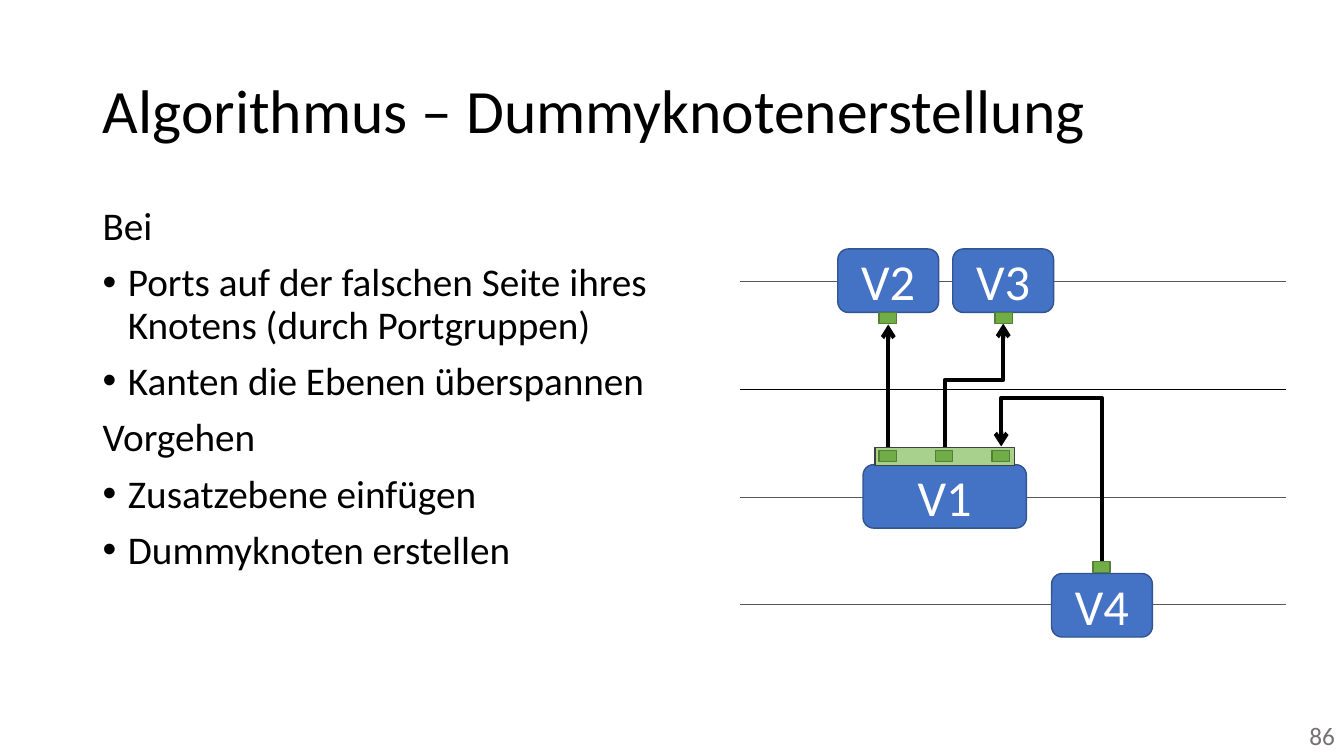
"""Builds the slide on creating dummy nodes in a layered graph drawing."""
import pptx
import pptx.util
import pptx.dml.color
import pptx.enum.shapes
import pptx.enum.text
import pptx.oxml
import pptx.oxml.ns
import lxml.etree

Inches, Pt = pptx.util.Inches, pptx.util.Pt
RGBColor = pptx.dml.color.RGBColor
SHAPE = pptx.enum.shapes.MSO_SHAPE
CONNECTOR = pptx.enum.shapes.MSO_CONNECTOR
ALIGN = pptx.enum.text.PP_ALIGN
ANCHOR = pptx.enum.text.MSO_ANCHOR
qn = pptx.oxml.ns.qn

BLACK = RGBColor(0x00, 0x00, 0x00)
WHITE = RGBColor(0xFF, 0xFF, 0xFF)
LAYER_GRAY = RGBColor(0x59, 0x59, 0x59)
NUMBER_GRAY = RGBColor(0x76, 0x71, 0x71)
NODE_BLUE = RGBColor(0x44, 0x72, 0xC4)
NODE_EDGE = RGBColor(0x32, 0x54, 0x91)
PORT_GREEN = RGBColor(0x70, 0xAD, 0x47)
PORT_EDGE = RGBColor(0x53, 0x80, 0x35)
GROUP_GREEN = RGBColor(0xA9, 0xD1, 0x8E)
GROUP_EDGE = RGBColor(0x40, 0x40, 0x40)

prs = pptx.Presentation()
prs.slide_width, prs.slide_height = Inches(13.33), Inches(7.5)
slide = prs.slides.add_slide(prs.slide_layouts[5])


def write(paragraph, text, size, color, align=ALIGN.LEFT):
    paragraph.alignment = align
    run = paragraph.add_run()
    run.text = text
    run.font.name, run.font.size = "Calibri", Pt(size)
    run.font.color.rgb = color


def add_box(kind, left, top, width, height, fill, edge):
    box = slide.shapes.add_shape(
        kind, Inches(left), Inches(top), Inches(width), Inches(height))
    box.shadow.inherit = False
    box.fill.solid()
    box.fill.fore_color.rgb = fill
    box.line.color.rgb = edge
    box.line.width = Pt(1)
    return box


title = slide.shapes.title
title.left, title.top = Inches(0.92), Inches(0.4)
title.width, title.height = Inches(11.5), Inches(1.45)
title.text_frame.auto_size = pptx.enum.text.MSO_AUTO_SIZE.NONE
title.text_frame.vertical_anchor = ANCHOR.MIDDLE
heading = title.text_frame.paragraphs[0]
heading.line_spacing = 0.9
write(heading, "Algorithmus – Dummyknotenerstellung", 44, BLACK)

outline = [
    ("Bei", False),
    ("Ports auf der falschen Seite ihres Knotens (durch Portgruppen)", True),
    ("Kanten die Ebenen überspannen", True),
    ("Vorgehen", False),
    ("Zusatzebene einfügen", True),
    ("Dummyknoten erstellen", True),
]
body = slide.shapes.add_textbox(
    Inches(0.92), Inches(2), Inches(5.65), Inches(4.76)).text_frame
body.word_wrap = True
for index, (text, bulleted) in enumerate(outline):
    paragraph = body.add_paragraph() if index else body.paragraphs[0]
    paragraph.line_spacing = 0.9
    paragraph.space_before = Pt(10)
    write(paragraph, text, 28, BLACK)
    if bulleted:
        properties = paragraph._p.get_or_add_pPr()
        properties.set("marL", str(Inches(0.25)))
        properties.set("indent", str(Inches(-0.25)))
        font = lxml.etree.SubElement(properties, qn("a:buFont"))
        font.set("typeface", "Arial")
        lxml.etree.SubElement(properties, qn("a:buChar")).set("char", "•")

for layer, color in enumerate([LAYER_GRAY, BLACK, LAYER_GRAY, LAYER_GRAY]):
    y = Inches(2.79 + 1.07 * layer)
    line = slide.shapes.add_connector(
        CONNECTOR.STRAIGHT, Inches(12.75), y, Inches(7.34), y)
    line.line.color.rgb = color
    line.line.width = Pt(0.5)
    lxml.etree.SubElement(line._element.spPr, qn("a:effectLst"))

edges = [
    (9.37, 4.47, 9.95, 3.21, 3.77),
    (10.93, 5.57, 9.93, 4.43, 3.95),
    (8.81, 4.47, 8.81, 3.22, None),
]
for x1, y1, x2, y2, bend_y in edges:
    if bend_y is None:
        edge = slide.shapes.add_connector(
            CONNECTOR.STRAIGHT, Inches(x1), Inches(y1), Inches(x2), Inches(y2))
    else:
        center_x, center_y = (x1 + x2) / 2, (y1 + y2) / 2
        rise, shift = y1 - y2, x2 - x1
        edge = slide.shapes.add_connector(
            CONNECTOR.ELBOW,
            Inches(center_x - rise / 2), Inches(center_y - shift / 2),
            Inches(center_x + rise / 2), Inches(center_y + shift / 2))
        edge._element.spPr.find(qn("a:xfrm")).set("rot", str(270 * 60000))
        adjustments = edge._element.spPr.find(qn("a:prstGeom")).find(qn("a:avLst"))
        guide = lxml.etree.SubElement(adjustments, qn("a:gd"))
        guide.set("name", "adj1")
        guide.set("fmla", f"val {round((y1 - bend_y) / rise * 100000)}")
    edge.line.color.rgb = BLACK
    edge.line.width = Pt(3)
    arrow = lxml.etree.SubElement(edge.line._get_or_add_ln(), qn("a:tailEnd"))
    arrow.set("type", "arrow")
    lxml.etree.SubElement(edge._element.spPr, qn("a:effectLst"))

nodes = [("V3", 9.45, 2.47, 1), ("V1", 8.56, 4.61, 1.62),
         ("V4", 10.43, 5.69, 1), ("V2", 8.31, 2.47, 1)]
for name, left, top, width in nodes:
    node = add_box(SHAPE.ROUNDED_RECTANGLE, left, top, width, 0.63,
                   NODE_BLUE, NODE_EDGE)
    node.text_frame.vertical_anchor = ANCHOR.MIDDLE
    write(node.text_frame.paragraphs[0], name, 36, WHITE, ALIGN.CENTER)

add_box(SHAPE.RECTANGLE, 8.68, 4.44, 1.38, 0.18, GROUP_GREEN, GROUP_EDGE)
ports = [(9.87, 3.1), (9.84, 4.47), (9.28, 4.47), (8.72, 4.47),
         (10.84, 5.57), (8.72, 3.1)]
for left, top in ports:
    add_box(SHAPE.RECTANGLE, left, top, 0.17, 0.11, PORT_GREEN, PORT_EDGE)

page_number = slide.shapes.add_textbox(
    Inches(12.88), Inches(7.1), Inches(0.46), Inches(0.4)).text_frame
page_number.word_wrap = False
write(page_number.paragraphs[0], "86", 18, NUMBER_GRAY, ALIGN.RIGHT)

prs.save("out.pptx")
